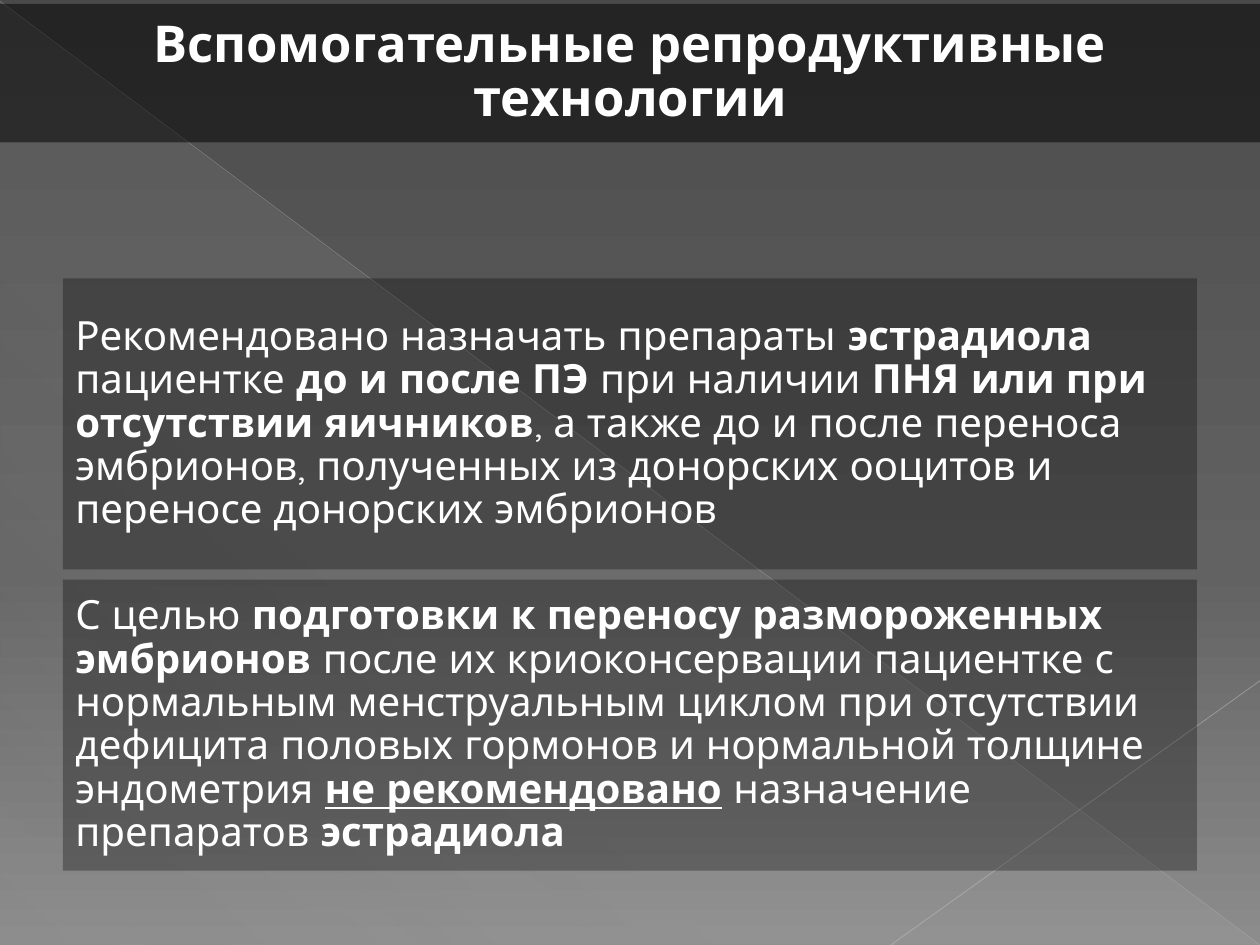
from collections import namedtuple
from dataclasses import dataclass

from lxml import etree
from pptx import Presentation, util as u
from pptx.dml.color import RGBColor
from pptx.enum import shapes, text
from pptx.oxml.ns import qn

Box = namedtuple("Box", "left top width height")


@dataclass(frozen=True)
class Theme:
    font: str = "Quicksand"
    ink: str = "FFFFFF"
    veil: str = "000000"
    title_size: int = 29
    body_size: int = 23
    title_alpha: int = 50
    card_alpha: int = 30
    line_spacing: float = 0.9
    backdrop: tuple = ((0, "4A4A4A", 100), (60, "626262", 100), (100, "8C8C8C", 100))
    sheen: tuple = ((0, "D2D2D2", 10), (70, "D2D2D2", 8), (100, "D2D2D2", 1))


THEME = Theme()
WIDTH, HEIGHT = 10, 7.5
PLAIN, BOLD, UNDERLINED = (False, False), (True, False), (True, True)

TITLE = [("Вспомогательные репродуктивные технологии", BOLD)]
RECOMMENDATIONS = [
    [
        ("Рекомендовано назначать препараты ", PLAIN),
        ("эстрадиола", BOLD),
        (" пациентке ", PLAIN),
        ("до и после ПЭ", BOLD),
        (" при наличии ", PLAIN),
        ("ПНЯ или при отсутствии яичников", BOLD),
        (", а также до и после переноса эмбрионов, полученных из донорских "
         "ооцитов и переносе донорских эмбрионов", PLAIN),
    ],
    [
        ("С целью ", PLAIN),
        ("подготовки к переносу размороженных эмбрионов ", BOLD),
        ("после их криоконсервации пациентке с нормальным менструальным циклом "
         "при отсутствии дефицита половых гормонов и нормальной толщине "
         "эндометрия ", PLAIN),
        ("не рекомендовано", UNDERLINED),
        (" назначение препаратов ", PLAIN),
        ("эстрадиола", BOLD),
    ],
]


def set_alpha(color, percent):
    etree.SubElement(color, qn("a:alpha"), val=str(percent * 1000))


def fill_solid(fill, properties, color, alpha):
    fill.solid()
    fill.fore_color.rgb = RGBColor.from_string(color)
    set_alpha(next(properties.iter(qn("a:srgbClr"))), alpha)


def fill_gradient(fill, properties, stops, angle):
    fill.solid()
    gradient = etree.Element(qn("a:gradFill"), rotWithShape="1")
    stop_list = etree.SubElement(gradient, qn("a:gsLst"))
    for position, color, alpha in stops:
        stop = etree.SubElement(stop_list, qn("a:gs"), pos=str(position * 1000))
        set_alpha(etree.SubElement(stop, qn("a:srgbClr"), val=color), alpha)
    etree.SubElement(gradient, qn("a:lin"), ang=str(angle * 60000), scaled="0")
    properties.replace(properties.find(qn("a:solidFill")), gradient)


def place(part, box):
    part.left, part.top, part.width, part.height = map(u.Inches, box)


def add_plain_shape(slide, kind, box):
    part = slide.shapes.add_shape(kind, *map(u.Inches, box))
    part.shadow.inherit = False
    part.line.fill.background()
    return part


def add_ray(slide, start, end, color, weight, alpha):
    ray = slide.shapes.add_connector(
        shapes.MSO_CONNECTOR.STRAIGHT, *map(u.Inches, start + end))
    properties = ray.element.spPr
    ray.line.width = u.Pt(weight)
    fill_solid(ray.line.fill, properties, color, alpha)
    etree.SubElement(properties, qn("a:effectLst"))


def write_runs(part, runs, size, align, inset):
    frame = part.text_frame
    frame.word_wrap = True
    frame.auto_size = text.MSO_AUTO_SIZE.NONE
    frame.vertical_anchor = text.MSO_ANCHOR.MIDDLE
    frame.margin_left = frame.margin_right = u.Inches(inset)
    frame.margin_top = frame.margin_bottom = u.Inches(inset)
    paragraph = frame.paragraphs[0]
    paragraph.alignment = align
    paragraph.line_spacing = THEME.line_spacing
    for wording, (bold, underlined) in runs:
        run = paragraph.add_run()
        run.text = wording
        run.font.name = THEME.font
        run.font.size = u.Pt(size)
        run.font.bold = bold
        run.font.underline = underlined
        run.font.color.rgb = RGBColor.from_string(THEME.ink)


def draw_backdrop(slide, box):
    background = slide.background.fill
    background.solid()
    fill_gradient(background, next(slide.element.iter(qn("p:bgPr"))), THEME.backdrop, 90)
    corner = add_plain_shape(slide, shapes.MSO_SHAPE.RIGHT_TRIANGLE, box)
    fill_gradient(corner.fill, corner.element.spPr, THEME.sheen, 133)
    right, bottom = box.left + box.width, box.top + box.height
    add_ray(slide, (box.left, box.top), (right, bottom), "BFBFBF", 0.39, 35)
    add_ray(slide, (right, box.top + 0.72 * box.height),
            (box.left + 0.707 * box.width, bottom), "C6C6C6", 0.47, 45)


def draw_title(slide, box):
    title = slide.shapes.title
    title.element.getparent().append(title.element)
    place(title, box)
    fill_solid(title.fill, title.element.spPr, THEME.veil, THEME.title_alpha)
    write_runs(title, TITLE, THEME.title_size, text.PP_ALIGN.CENTER, 0.12)


def draw_recommendations(slide, box, gap):
    count = len(RECOMMENDATIONS)
    height = (box.height - gap * (count - 1)) / count
    for row, runs in enumerate(RECOMMENDATIONS):
        card_box = Box(box.left, box.top + row * (height + gap), box.width, height)
        card = add_plain_shape(slide, shapes.MSO_SHAPE.RECTANGLE, card_box)
        fill_solid(card.fill, card.element.spPr, THEME.veil, THEME.card_alpha)
        write_runs(card, runs, THEME.body_size, text.PP_ALIGN.LEFT, 0.1)


def main():
    deck = Presentation()
    deck.slide_width, deck.slide_height = u.Inches(WIDTH), u.Inches(HEIGHT)
    slide = deck.slides.add_slide(deck.slide_layouts.get_by_name("Title Only"))
    margin = 0.05 * WIDTH
    draw_backdrop(slide, Box(0, 0.01, WIDTH, HEIGHT - 0.01))
    draw_recommendations(slide, Box(margin, 2.21, WIDTH - 2 * margin, 4.7), 0.08)
    draw_title(slide, Box(0, 0.03, WIDTH, 1.1))
    deck.save("out.pptx")


if __name__ == "__main__":
    main()
